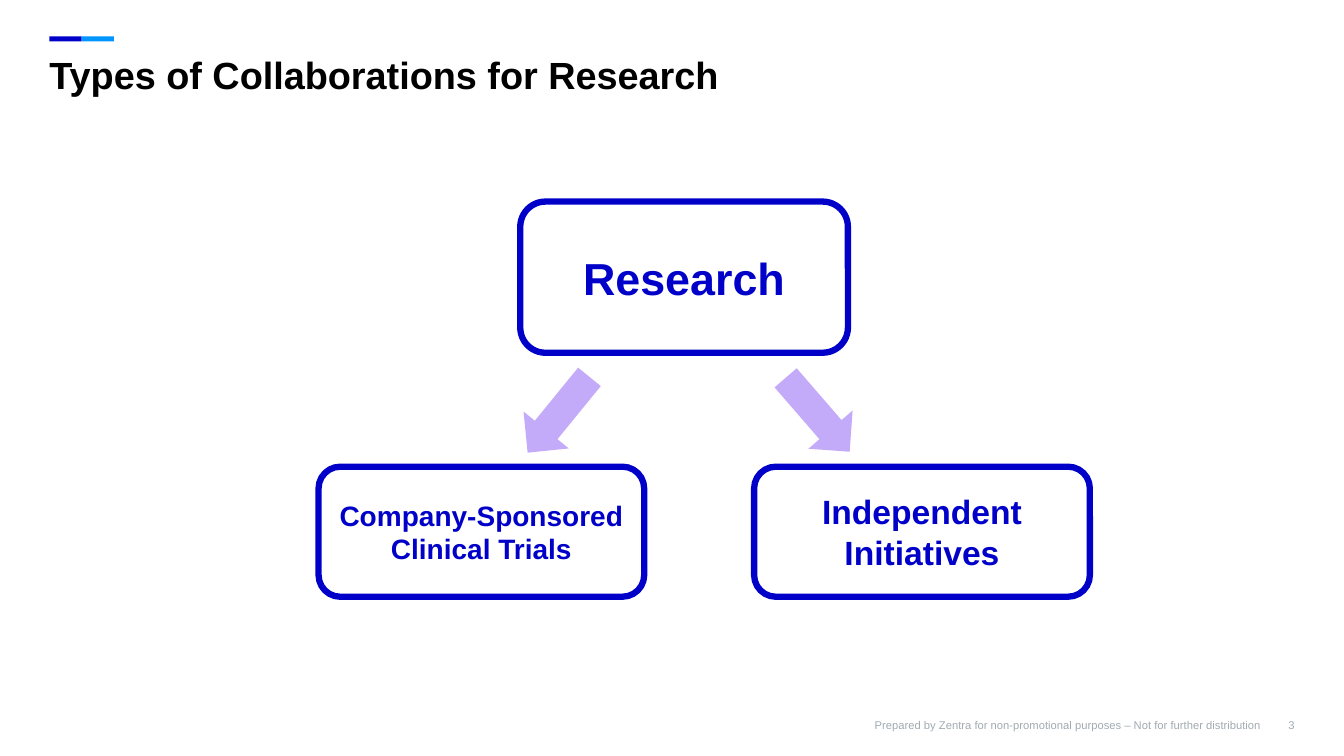
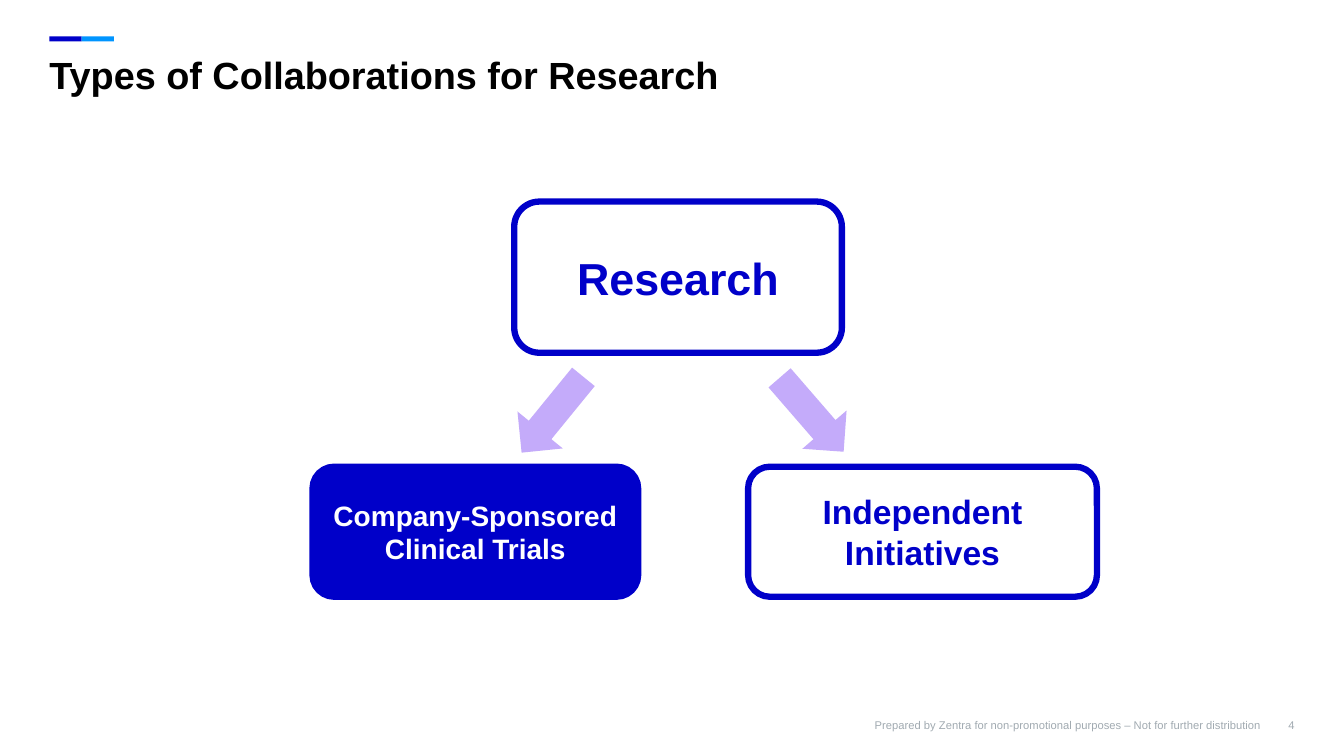
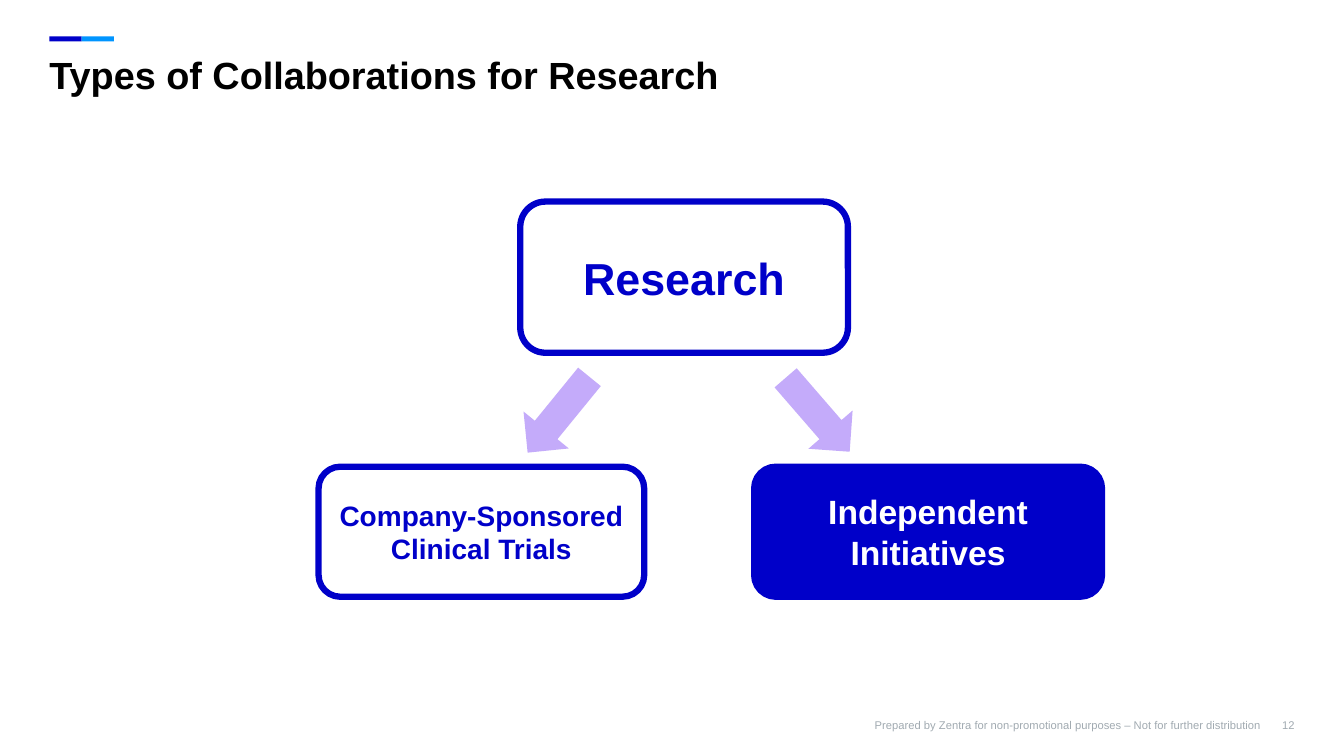
"""Build three slides on the types of research collaboration."""
from dataclasses import dataclass
from typing import Optional

from pptx import Presentation
from pptx.dml.color import RGBColor
from pptx.enum.shapes import MSO_SHAPE
from pptx.enum.text import MSO_ANCHOR, PP_ALIGN
from pptx.shapes.autoshape import Shape
from pptx.slide import Slide
from pptx.util import Emu, Pt

EMU_PER_PX = 9144
FONT = "Arial"
NAVY = RGBColor(0x00, 0x00, 0xC9)
SKY = RGBColor(0x00, 0x95, 0xFF)
LILAC = RGBColor(0xC4, 0xAB, 0xFA)
GRAY = RGBColor(0xA1, 0xAA, 0xB1)
BLACK = RGBColor(0x00, 0x00, 0x00)
WHITE = RGBColor(0xFF, 0xFF, 0xFF)

TITLE = "Types of Collaborations for Research"
FOOTER = "Prepared by Zentra for non-promotional purposes – Not for further distribution"
RESEARCH = "Research"
SPONSORED = "Company-Sponsored Clinical Trials"
INDEPENDENT = "Independent Initiatives"


@dataclass(frozen=True)
class Frame:
    left: int
    top: int
    width: int
    height: int

    def emu(self) -> tuple[Emu, ...]:
        """Return the frame in EMU."""
        sides = (self.left, self.top, self.width, self.height)
        return tuple(Emu(side * EMU_PER_PX) for side in sides)


@dataclass(frozen=True)
class TextStyle:
    size: int
    color: RGBColor
    bold: bool = False
    align: PP_ALIGN = PP_ALIGN.LEFT
    anchor: MSO_ANCHOR = MSO_ANCHOR.TOP
    line_spacing: Optional[float] = None


@dataclass(frozen=True)
class Topic:
    label: str
    left: int
    top: int
    width: int
    height: int
    size: int


@dataclass(frozen=True)
class Arrow:
    left: int
    rotation: float


@dataclass(frozen=True)
class Page:
    number: int
    shift: int
    independent_width: int
    highlight: Optional[str] = None


TITLE_STYLE = TextStyle(27, BLACK, bold=True, line_spacing=0.85)
FOOTER_STYLE = TextStyle(8, GRAY, align=PP_ALIGN.RIGHT, anchor=MSO_ANCHOR.BOTTOM, line_spacing=0.9)
ARROWS = (Arrow(525, 39.2), Arrow(782, 319.1))
PAGES = (
    Page(3, 0, 333),
    Page(4, -6, 346, SPONSORED),
    Page(12, 0, 345, INDEPENDENT),
)


def write(shape: Shape, text: str, style: TextStyle) -> None:
    """Write one styled paragraph into a shape."""
    frame = shape.text_frame
    frame.word_wrap = True
    frame.vertical_anchor = style.anchor
    para = frame.paragraphs[0]
    para.alignment = style.align
    if style.line_spacing:
        para.line_spacing = style.line_spacing
    span = para.add_run()
    span.text = text
    span.font.name = FONT
    span.font.size = Pt(style.size)
    span.font.bold = style.bold
    span.font.color.rgb = style.color


def add_text(slide: Slide, frame: Frame, text: str, style: TextStyle, inset: int = 0) -> None:
    """Add a text box with no side margins."""
    box = slide.shapes.add_textbox(*frame.emu())
    box.text_frame.margin_left = box.text_frame.margin_right = 0
    box.text_frame.margin_top = box.text_frame.margin_bottom = Emu(inset * EMU_PER_PX)
    write(box, text, style)


def add_block(slide: Slide, kind: MSO_SHAPE, frame: Frame, fill: RGBColor) -> Shape:
    """Add a flat filled shape without an outline."""
    block = slide.shapes.add_shape(kind, *frame.emu())
    block.shadow.inherit = False
    block.fill.solid()
    block.fill.fore_color.rgb = fill
    block.line.fill.background()
    return block


def add_topic(slide: Slide, topic: Topic, highlighted: bool) -> None:
    """Add an outlined topic box, filled when highlighted."""
    fill, ink = (NAVY, WHITE) if highlighted else (WHITE, NAVY)
    frame = Frame(topic.left, topic.top, topic.width, topic.height)
    box = add_block(slide, MSO_SHAPE.ROUNDED_RECTANGLE, frame, fill)
    box.line.color.rgb = NAVY
    box.line.width = Pt(4.5)
    write(box, topic.label, TextStyle(topic.size, ink, True, PP_ALIGN.CENTER, MSO_ANCHOR.MIDDLE))


def add_furniture(slide: Slide, number: int) -> None:
    """Add the accent bar, title, footer and page number."""
    for index, color in enumerate((NAVY, SKY)):
        add_block(slide, MSO_SHAPE.RECTANGLE, Frame(49 + 32 * index, 36, 32, 5), color)
    add_text(slide, Frame(1254, 689, 30, 37), str(number), FOOTER_STYLE)
    add_text(slide, Frame(666, 689, 585, 37), FOOTER, FOOTER_STYLE)
    add_text(slide, Frame(49, 53, 1235, 93), TITLE, TITLE_STYLE, inset=5)


def add_diagram(slide: Slide, page: Page) -> None:
    """Add the three topics and the arrows between them."""
    topics = (
        Topic(SPONSORED, 316 + page.shift, 463, 323, 129, 20),
        Topic(INDEPENDENT, 748 + page.shift, 463, page.independent_width, 129, 24),
        Topic(RESEARCH, 516 + page.shift, 200, 325, 150, 32),
    )
    for topic in topics:
        add_topic(slide, topic, topic.label == page.highlight)
    for arrow in ARROWS:
        frame = Frame(arrow.left + page.shift, 363, 58, 97)
        add_block(slide, MSO_SHAPE.DOWN_ARROW, frame, LILAC).rotation = arrow.rotation


def main() -> None:
    """Build and save the deck."""
    deck = Presentation()
    deck.slide_width = Emu(1333 * EMU_PER_PX)
    deck.slide_height = Emu(750 * EMU_PER_PX)
    for page in PAGES:
        slide = deck.slides.add_slide(deck.slide_layouts[6])
        add_furniture(slide, page.number)
        add_diagram(slide, page)
    deck.save("out.pptx")


if __name__ == "__main__":
    main()
